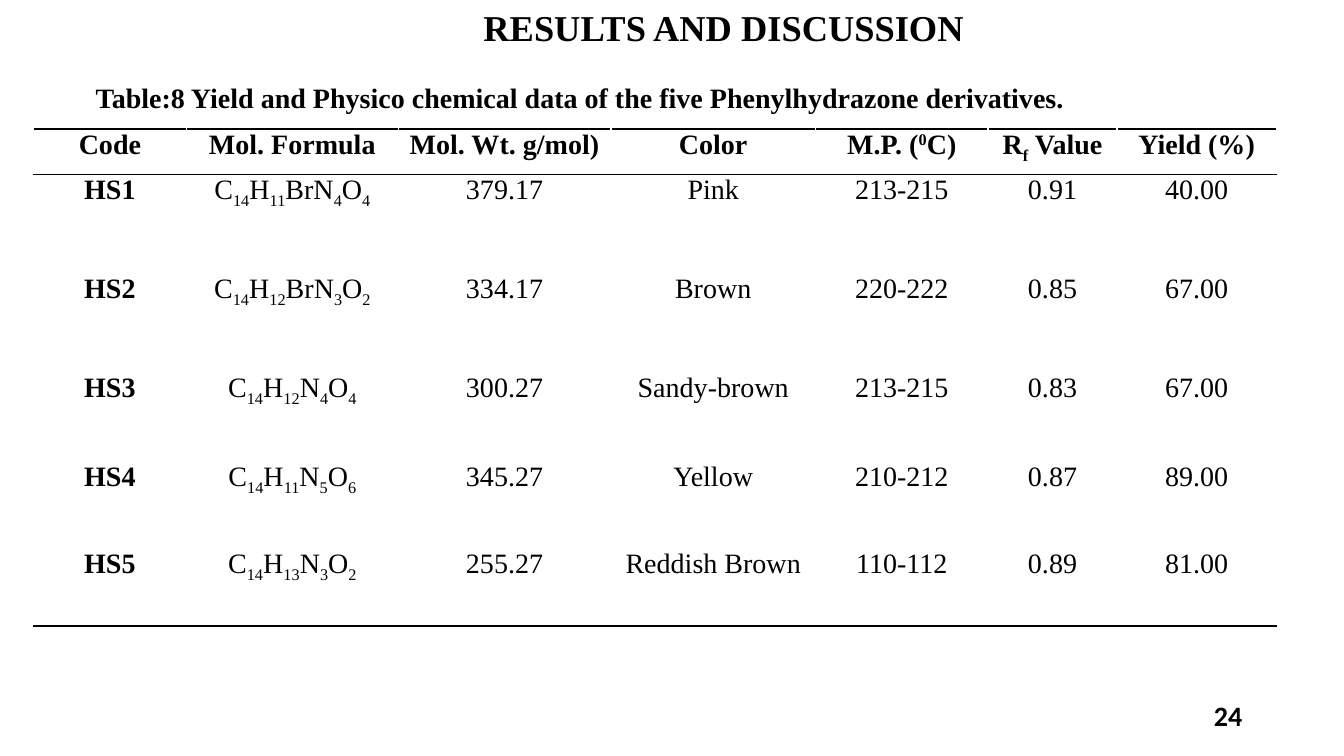
from dataclasses import dataclass
from itertools import groupby

from lxml import etree
from pptx import Presentation
from pptx.dml.color import RGBColor
from pptx.enum.text import MSO_ANCHOR, PP_ALIGN
from pptx.oxml.ns import qn
from pptx.util import Inches, Pt

LEFT, CENTER, RIGHT, JUSTIFY = (
    PP_ALIGN.LEFT, PP_ALIGN.CENTER, PP_ALIGN.RIGHT, PP_ALIGN.JUSTIFY)
TOP, MIDDLE = MSO_ANCHOR.TOP, MSO_ANCHOR.MIDDLE
SUB, SUPER = -25000, 30000
NO_GRID_STYLE = "{2D5ABB26-0587-4C30-8999-92F81FD0307C}"


@dataclass(frozen=True)
class Theme:
    ink: str = "000000"
    paper: str = "FFFFFF"
    serif: str = "Times New Roman"
    sans: str = "Calibri"
    title: int = 26
    body: int = 20
    rule: int = 1


@dataclass(frozen=True)
class Run:
    text: str
    baseline: int = 0


@dataclass(frozen=True)
class Label:
    text: str
    box: tuple[float, float, float, float]  # percent of slide size
    size: int
    font: str
    align: PP_ALIGN
    anchor: MSO_ANCHOR = TOP


@dataclass(frozen=True)
class Compound:
    code: str
    formula: str
    weight: str
    color: str
    melting: str
    rf: str
    yield_pct: str


THEME = Theme()
SLIDE_W, SLIDE_H = Inches(13.33), Inches(7.5)

LABELS = [
    Label("24", (88.9, 92.4, 4.28, 4.4), THEME.body, THEME.sans, RIGHT, MIDDLE),
    Label("Table:8 Yield and Physico chemical data of the five "
          "Phenylhydrazone derivatives.",
          (6.38, 10, 75.99, 5.87), THEME.body, THEME.serif, JUSTIFY),
    Label("RESULTS AND DISCUSSION", (32.86, 0, 42.01, 7.2),
          THEME.title, THEME.serif, CENTER),
]

# Table grid, in percent of slide size
TABLE_X, TABLE_Y = 2.48, 17.07
COLS = [11.4, 15.75, 15.83, 15.23, 12.83, 9.6, 11.85]
ROWS = [6, 13.07, 13.07, 11.87, 11.47, 10.27]

HEADER = [
    [Run("Code")], [Run("Mol. Formula")], [Run("Mol. Wt. g/mol)")], [Run("Color")],
    [Run("M.P. ("), Run("0", SUPER), Run("C)")],
    [Run("R"), Run("f", SUB), Run(" Value")], [Run("Yield (%)")],
]
COMPOUNDS = [
    Compound("HS1", "C14H11BrN4O4", "379.17", "Pink", "213-215", "0.91", "40.00"),
    Compound("HS2", "C14H12BrN3O2", "334.17", "Brown", "220-222", "0.85", "67.00"),
    Compound("HS3", "C14H12N4O4", "300.27", "Sandy-brown", "213-215", "0.83", "67.00"),
    Compound("HS4", "C14H11N5O6", "345.27", "Yellow", "210-212", "0.87", "89.00"),
    Compound("HS5", "C14H13N3O2", "255.27", "Reddish Brown", "110-112", "0.89", "81.00"),
]


def across(pct: float) -> int:
    return round(SLIDE_W * pct / 100)


def down(pct: float) -> int:
    return round(SLIDE_H * pct / 100)


def formula_runs(formula: str) -> list[Run]:
    """Atom counts become subscripts."""
    return [Run("".join(part), SUB if digits else 0)
            for digits, part in groupby(formula, str.isdigit)]


def compound_cells(c: Compound) -> list[list[Run]]:
    plain = [[Run(t)] for t in (c.weight, c.color, c.melting, c.rf, c.yield_pct)]
    return [[Run(c.code)], formula_runs(c.formula), *plain]


def apply(target, values: dict) -> None:
    for name, value in values.items():
        setattr(target, name, value)


def write(p, runs: list[Run], size: int, font: str, bold: bool, align: PP_ALIGN) -> None:
    p.alignment = align
    for run in runs:
        r = p.add_run()
        r.text = run.text
        apply(r.font, {"size": Pt(size), "name": font, "bold": bold})
        r.font.color.rgb = RGBColor.from_string(THEME.ink)
        if run.baseline:
            r.font._element.set("baseline", str(run.baseline))


def add_label(s, label: Label) -> None:
    x, y, w, h = label.box
    tf = s.shapes.add_textbox(across(x), down(y), across(w), down(h)).text_frame
    apply(tf, {"word_wrap": True, "vertical_anchor": label.anchor})
    write(tf.paragraphs[0], [Run(label.text)], label.size, label.font, True, label.align)


def set_border(cell, side: str, color: str) -> None:
    ln = etree.SubElement(cell._tc.get_or_add_tcPr(), qn(f"a:ln{side}"),
                          w=str(Pt(THEME.rule)))
    fill = etree.SubElement(ln, qn("a:solidFill"))
    etree.SubElement(fill, qn("a:srgbClr"), val=color)


def add_results_table(s) -> None:
    rows = [HEADER, *map(compound_cells, COMPOUNDS)]
    frame = s.shapes.add_table(len(ROWS), len(COLS), across(TABLE_X), down(TABLE_Y),
                               across(sum(COLS)), down(sum(ROWS)))
    table = frame.table
    apply(table, {"first_row": False, "horz_banding": False})
    table._tbl.tblPr.find(qn("a:tableStyleId")).text = NO_GRID_STYLE
    for column, width in zip(table.columns, COLS):
        column.width = across(width)
    for row, height in zip(table.rows, ROWS):
        row.height = down(height)

    last = len(ROWS) - 1
    for i, row in enumerate(rows):
        # Dark rules frame the header and close the table
        borders = {"L": THEME.paper, "R": THEME.paper,
                   "T": THEME.ink if i <= 1 else THEME.paper,
                   "B": THEME.ink if i in (0, last) else THEME.paper}
        for j, runs in enumerate(row):
            cell = table.cell(i, j)
            apply(cell, {"margin_left": Inches(0.07), "margin_right": Inches(0.07),
                         "margin_top": 0, "margin_bottom": 0, "vertical_anchor": TOP})
            for side, color in borders.items():
                set_border(cell, side, color)
            cell.fill.background()
            write(cell.text_frame.paragraphs[0], runs, THEME.body, THEME.serif,
                  i == 0 or j == 0, CENTER)


def main() -> None:
    prs = Presentation()
    apply(prs, {"slide_width": SLIDE_W, "slide_height": SLIDE_H})
    s = prs.slides.add_slide(prs.slide_layouts[6])
    s.background.fill.solid()
    s.background.fill.fore_color.rgb = RGBColor.from_string(THEME.paper)
    add_results_table(s)
    for label in LABELS:
        add_label(s, label)
    prs.save("out.pptx")


if __name__ == "__main__":
    main()
